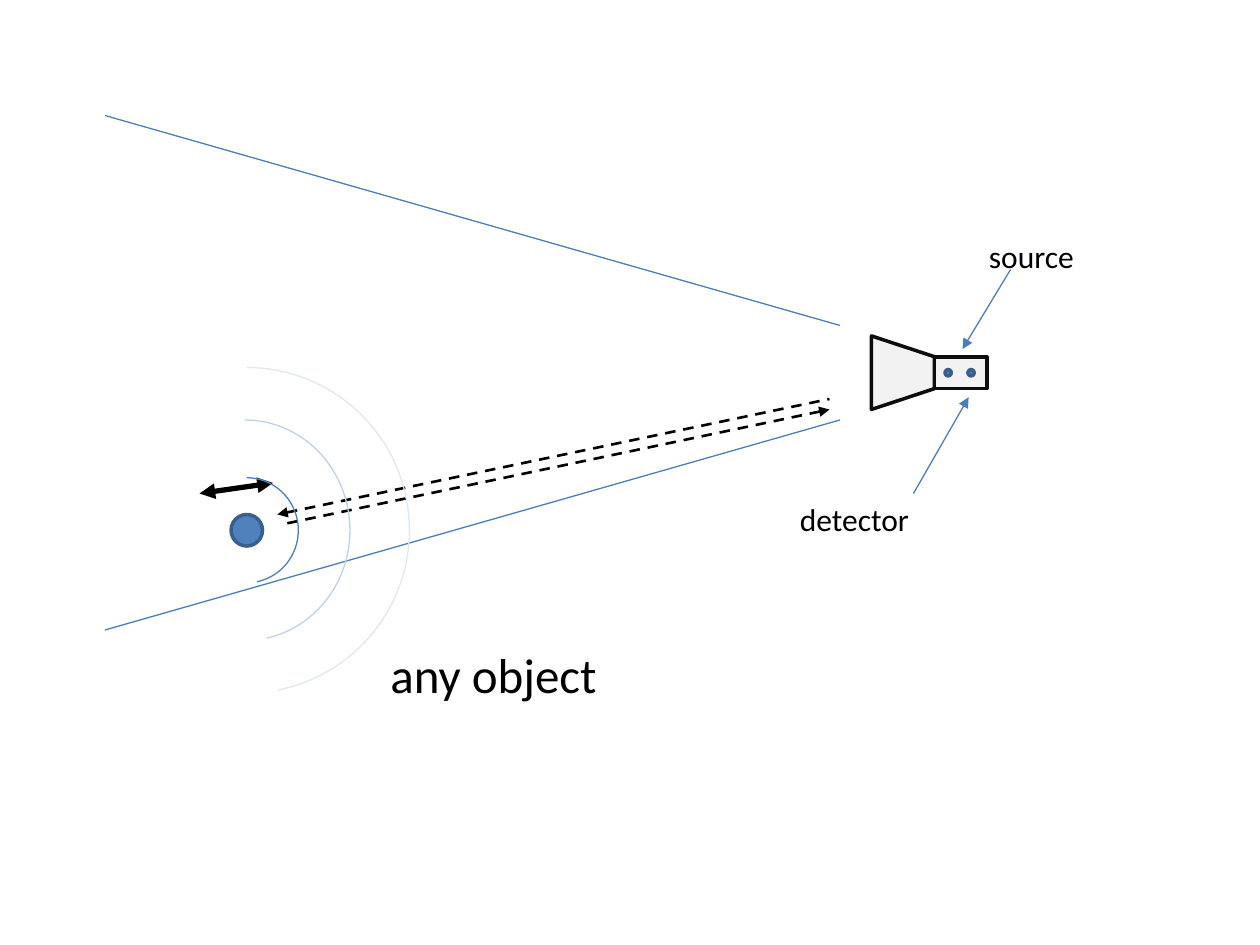
from dataclasses import dataclass

from lxml.etree import SubElement
from pptx import Presentation
from pptx.dml.color import RGBColor
from pptx.enum.dml import MSO_LINE
from pptx.enum.shapes import MSO_CONNECTOR, MSO_SHAPE
from pptx.enum.text import MSO_AUTO_SIZE
from pptx.oxml.ns import qn
from pptx.util import Pt


@dataclass(frozen=True)
class Theme:
    font: str = "Calibri"
    label_size: float = 18
    caption_size: float = 28
    black: str = "000000"
    beam: str = "4B7EBC"
    dot_fill: str = "4F81BD"
    dot_line: str = "3A5F8C"
    wave_middle: str = "BFD1E7"
    wave_outer: str = "DEE7F2"
    lamp_fill: str = "F2F2F2"
    lamp_line: str = "0D0D0D"


THEME = Theme()


def rgb(color):
    return RGBColor.from_string(color)


def set_line(shape, color, width):
    shape.line.color.rgb = rgb(color)
    shape.line.width = Pt(width)


def add_figure(parent, kind, box, fill, line, width):
    """Add a preset shape; box is left, top, width, height."""
    figure = parent.shapes.add_shape(kind, *map(Pt, box))
    figure.shadow.inherit = False
    if fill:
        figure.fill.solid()
        figure.fill.fore_color.rgb = rgb(fill)
    else:
        figure.fill.background()
    set_line(figure, line, width)
    return figure


def centred_box(center, width, height):
    return center[0] - width / 2, center[1] - height / 2, width, height


def add_dot(page, center, size):
    add_figure(page, MSO_SHAPE.OVAL, centred_box(center, size, size),
               THEME.dot_fill, THEME.dot_line, 2)


def add_wave(page, center, width, height, color):
    """Add an arc from the top, clockwise, to just right of the bottom."""
    wave = add_figure(page, MSO_SHAPE.ARC, centred_box(center, width, height),
                      None, color, 0.75)
    wave.adjustments[0] = 162
    wave.adjustments[1] = 47.23


def add_line(page, start, end, color=THEME.beam, width=0.75,
             dashed=False, arrows=()):
    """Add a straight line; arrows may name headEnd (start) and tailEnd (end)."""
    line = page.shapes.add_connector(MSO_CONNECTOR.STRAIGHT,
                                     *map(Pt, (*start, *end)))
    set_line(line, color, width)
    if dashed:
        line.line.dash_style = MSO_LINE.DASH
    properties = line.line._get_or_add_ln()
    for arrow in arrows:
        SubElement(properties, qn(f"a:{arrow}"), type="triangle")
    SubElement(line._element.spPr, qn("a:effectLst"))


def add_label(page, text, box, size):
    label = page.shapes.add_textbox(*map(Pt, box))
    frame = label.text_frame
    frame.word_wrap = True
    frame.auto_size = MSO_AUTO_SIZE.SHAPE_TO_FIT_TEXT
    para = frame.paragraphs[0]
    para.text = text
    para.font.name = THEME.font
    para.font.size = Pt(size)
    para.font.color.rgb = rgb(THEME.black)


def add_lamp(page):
    lamp = page.shapes.add_group_shape()
    style = THEME.lamp_fill, THEME.lamp_line, 2
    horn = add_figure(lamp, MSO_SHAPE.TRAPEZOID, (495, 195, 42, 36), *style)
    horn.adjustments[0] = 0.33
    horn.rotation = 90
    add_figure(lamp, MSO_SHAPE.RECTANGLE, (534, 204, 30, 18), *style)


def main():
    deck = Presentation()
    deck.slide_width, deck.slide_height = Pt(720), Pt(540)
    page = deck.slides.add_slide(deck.slide_layouts[6])

    add_lamp(page)

    # Rays to and from the object, and the motion of the object
    add_line(page, (158.5, 294), (474, 228), THEME.black, 1.5, True, ["headEnd"])
    add_line(page, (474, 234), (162, 299.5), THEME.black, 1.5, True, ["headEnd"])
    add_line(page, (114, 282), (156, 276), THEME.black, 3,
             arrows=["headEnd", "tailEnd"])

    # Lamp parts with their pointers
    add_label(page, "source", (558, 132, 66, 30), THEME.label_size)
    add_line(page, (577.5, 154), (550, 199.5), arrows=["tailEnd"])
    add_line(page, (522, 282), (553.5, 227), arrows=["tailEnd"])
    add_label(page, "detector", (450, 282, 84, 29), THEME.label_size)
    for x in (541.8, 554.9):
        add_dot(page, (x, 213), 3.6)

    # Edges of the beam
    add_line(page, (480, 186), (60, 66))
    add_line(page, (60, 360), (480, 240))

    # Object and the waves it sends back
    center = 141, 303
    add_dot(page, center, 18)
    add_wave(page, center, 186, 186, THEME.wave_outer)
    add_wave(page, (140, 303), 120, 126, THEME.wave_middle)
    add_wave(page, center, 59, 60, THEME.beam)
    add_label(page, "any object", (216, 364.5, 138, 41), THEME.caption_size)

    deck.save("out.pptx")


if __name__ == "__main__":
    main()
